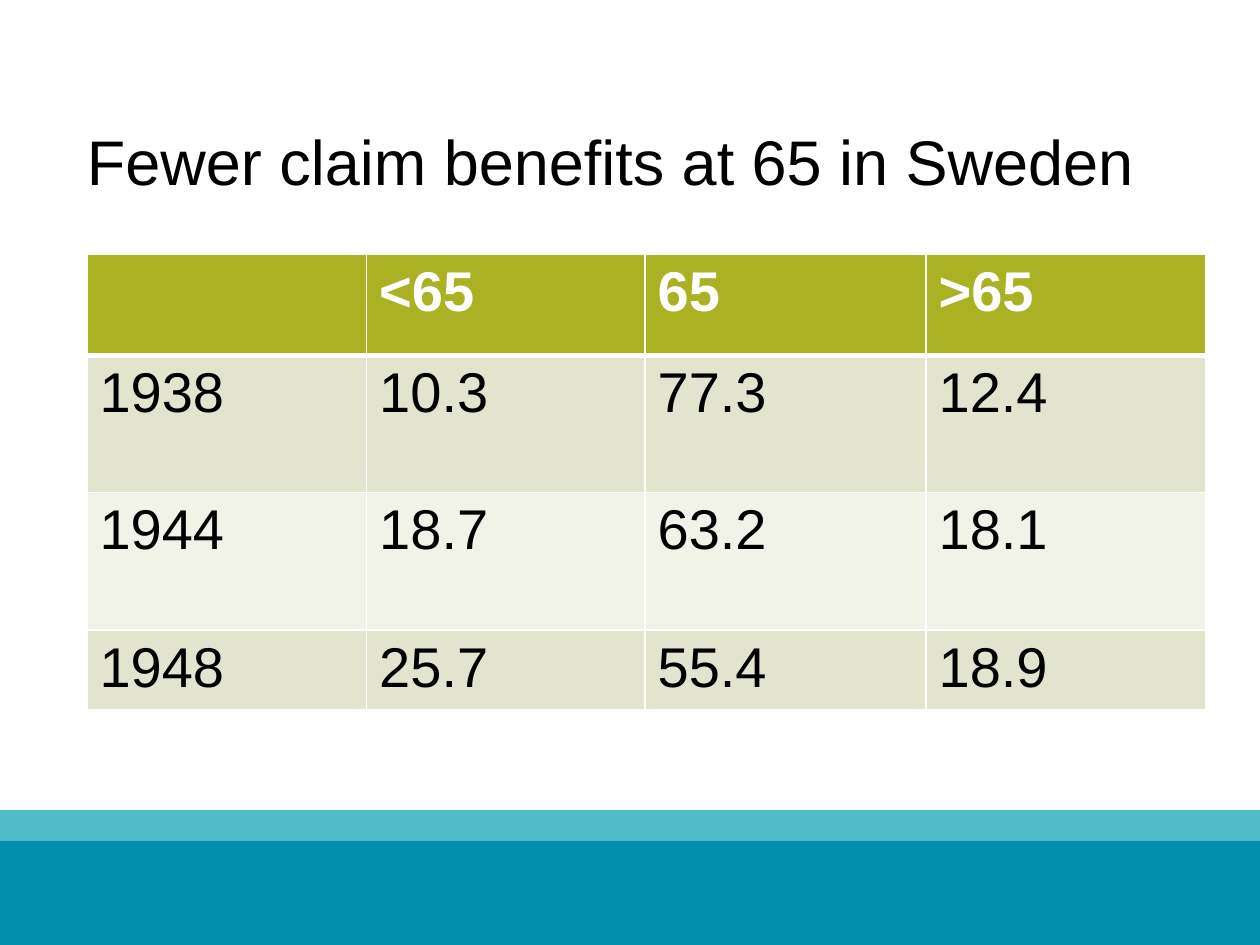
from pptx import Presentation
from pptx.dml.color import RGBColor
from pptx.enum.shapes import MSO_SHAPE
from pptx.enum.text import MSO_ANCHOR
from pptx.oxml.ns import qn
from pptx.util import Inches, Pt
from lxml.etree import SubElement

HUES = {
    "white": "FFFFFF",
    "black": "000000",
    "teal": "0090AE",
    "aqua": "50BDCB",
    "head": "AAB123",
    "odd": "E2E4CD",
    "even": "F1F2E8",
}
ROWS = [
    ["", "<65", "65", ">65"],
    ["1938", "10.3", "77.3", "12.4"],
    ["1944", "18.7", "63.2", "18.1"],
    ["1948", "25.7", "55.4", "18.9"],
]
WIDTHS = [2.22, 2.21, 2.23, 2.22]
HEIGHTS = [0.8, 1.09, 1.09, 0.6]
LEFT = 0.69


def hue(name):
    return RGBColor.from_string(HUES[name])


def add_band(slide, top, height, color):
    band = slide.shapes.add_shape(
        MSO_SHAPE.RECTANGLE, 0, Inches(top), Inches(10), Inches(height))
    band.shadow.inherit = False
    band.fill.solid()
    band.fill.fore_color.rgb = hue(color)
    band.line.fill.background()


def add_run(para, text, size, color, bold=False):
    run = para.add_run()
    run.text = text
    font = run.font
    font.name, font.size, font.bold = "Arial", Pt(size), bold
    font.color.rgb = hue(color)


def add_title(slide, text):
    box = slide.shapes.add_textbox(
        Inches(LEFT), Inches(0.6), Inches(8.71), Inches(0.97))
    frame = box.text_frame
    frame.word_wrap = True
    frame.vertical_anchor = MSO_ANCHOR.BOTTOM
    frame.margin_left = frame.margin_right = 0
    frame.margin_top = frame.margin_bottom = 0
    add_run(frame.paragraphs[0], text, 36, "black")


def set_edge(cell, side, width):
    props = cell._tc.get_or_add_tcPr()
    line = SubElement(props, qn(f"a:ln{side}"), w=str(Pt(width)))
    fill = SubElement(line, qn("a:solidFill"))
    SubElement(fill, qn("a:srgbClr"), val=HUES["white"])


def fill_cell(cell, text, row):
    head = row == 0
    for side in "LRTB":
        heavy = (side == "B" and head) or (side == "T" and row == 1)
        set_edge(cell, side, 3 if heavy else 1)
    cell.fill.solid()
    cell.fill.fore_color.rgb = hue(
        "head" if head else "odd" if row % 2 else "even")
    if text:
        add_run(cell.text_frame.paragraphs[0], text, 32,
                "white" if head else "black", head)


def add_grid(slide):
    table = slide.shapes.add_table(
        len(ROWS), len(WIDTHS), Inches(LEFT), Inches(2.02),
        Inches(sum(WIDTHS)), Inches(sum(HEIGHTS))).table
    for col, width in zip(table.columns, WIDTHS):
        col.width = Inches(width)
    for i, (row, height) in enumerate(zip(table.rows, HEIGHTS)):
        row.height = Inches(height)
        for cell, text in zip(row.cells, ROWS[i]):
            fill_cell(cell, text, i)


def main():
    deck = Presentation()
    deck.slide_width, deck.slide_height = Inches(10), Inches(7.5)
    slide = deck.slides.add_slide(deck.slide_layouts[6])
    add_band(slide, 6.67, 0.83, "teal")
    add_band(slide, 6.43, 0.24, "aqua")
    add_title(slide, "Fewer claim benefits at 65 in Sweden")
    add_grid(slide)
    deck.save("out.pptx")


if __name__ == "__main__":
    main()
